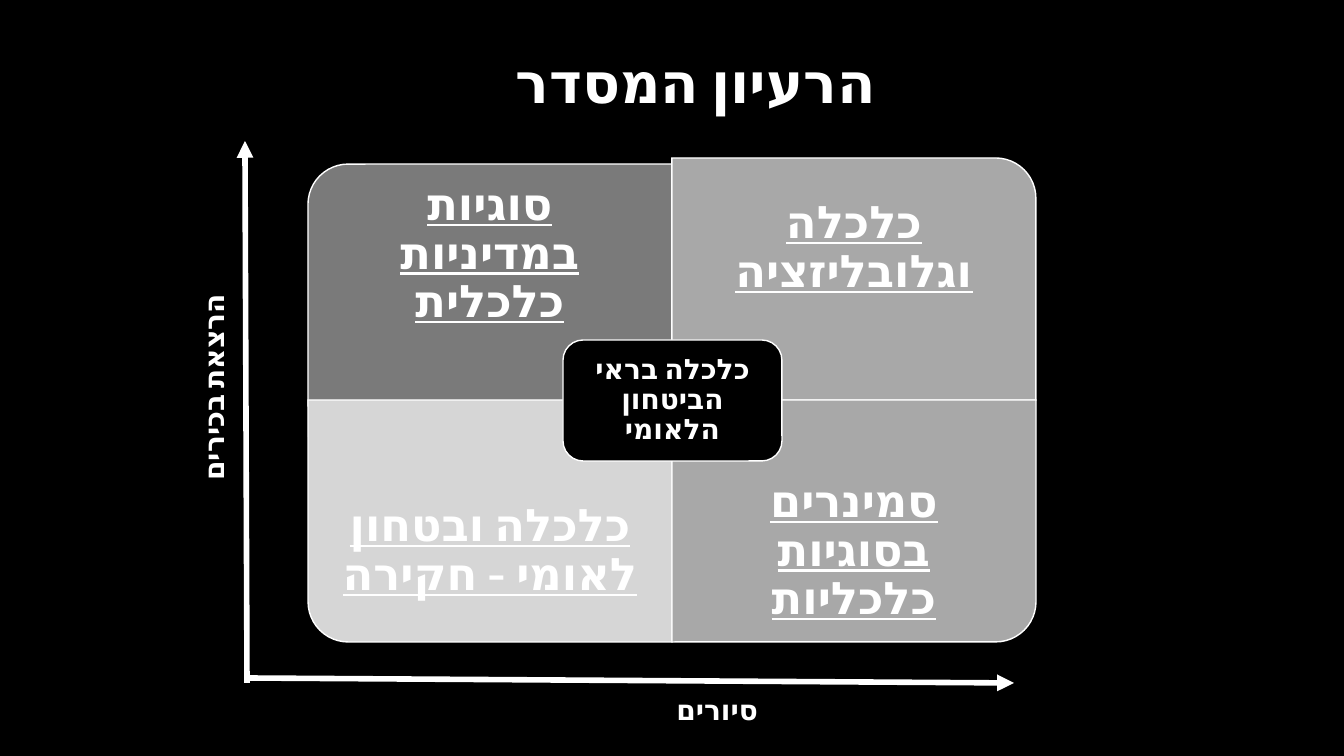
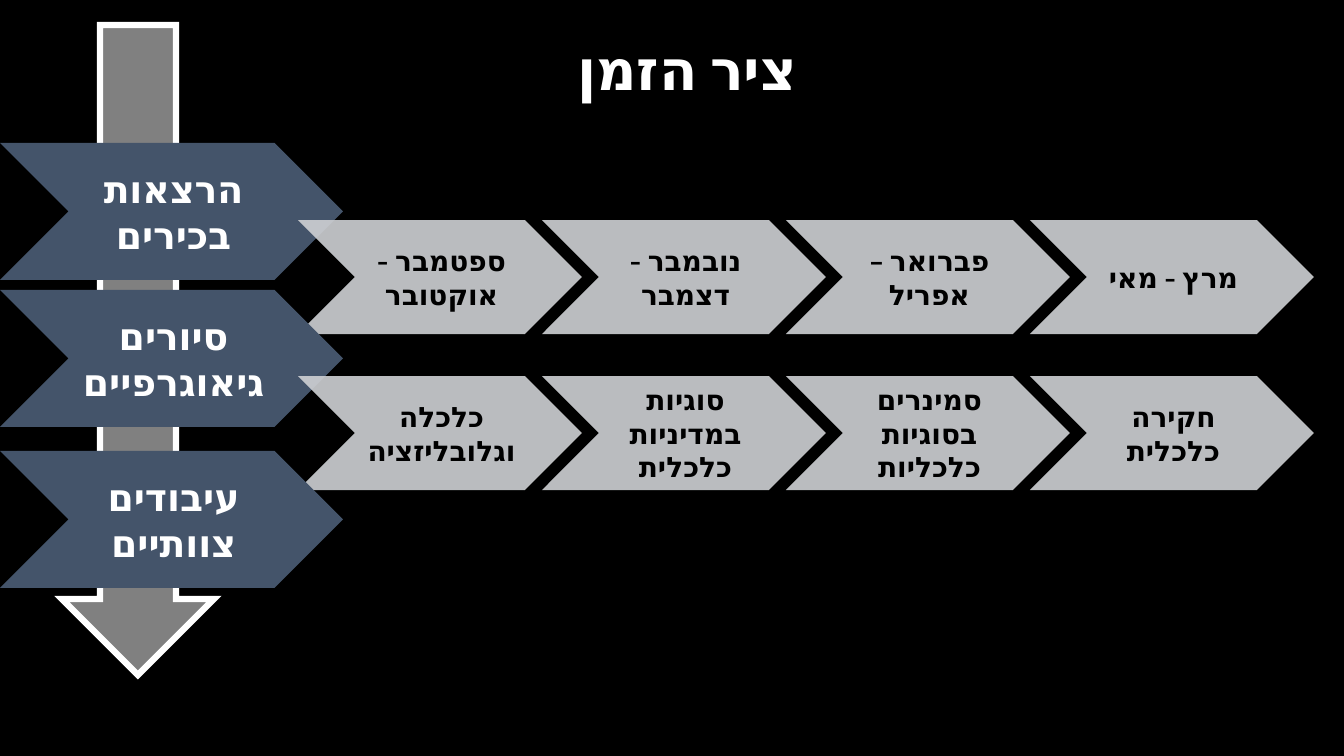
from pptx import Presentation
from pptx.dml.color import RGBColor
from pptx.enum.lang import MSO_LANGUAGE_ID
from pptx.enum.shapes import MSO_CONNECTOR, MSO_SHAPE
from pptx.enum.text import MSO_ANCHOR, MSO_AUTO_SIZE, PP_ALIGN
from pptx.oxml.xmlchemy import OxmlElement
from pptx.util import Emu, Pt

EMU_PER_PX = 914400 / 100.8
FONT = "Cabin"
COLORS = {
    "black": "000000", "white": "FFFFFF", "dark gray": "7A7A7A",
    "mid gray": "A8A8A8", "pale gray": "D6D6D6", "arrow gray": "808080",
    "slate": "44546A", "silver": "CFD1D4",
}
STRAIGHT = MSO_CONNECTOR.STRAIGHT
ROUND_CORNER = MSO_SHAPE.ROUND_1_RECTANGLE
ROUNDED = MSO_SHAPE.ROUNDED_RECTANGLE
CHEVRON = MSO_SHAPE.CHEVRON
DOWN_ARROW = MSO_SHAPE.DOWN_ARROW
HEBREW = MSO_LANGUAGE_ID.HEBREW
MIDDLE = MSO_ANCHOR.MIDDLE
GROW = MSO_AUTO_SIZE.SHAPE_TO_FIT_TEXT
CENTER, RIGHT = PP_ALIGN.CENTER, PP_ALIGN.RIGHT

QUADRANT_WIDTH, QUADRANT_HEIGHT, QUADRANT_TEXT_HEIGHT = 364, 242, 181
MATRIX_CENTER_X, MATRIX_CENTER_Y = 672, 400
QUADRANTS = [
    ("סוגיות במדיניות כלכלית", "dark gray", 270, 0, 164),
    ("כלכלה וגלובליזציה", "mid gray", 0, 1, 158),
    ("כלכלה ובטחון לאומי - חקירה", "pale gray", 180, 0, MATRIX_CENTER_Y),
    ("סמינרים בסוגיות כלכליות", "mid gray", 90, 1, MATRIX_CENTER_Y),
]
TIMELINE = [
    ("הרצאות בכירים", 143,
     ["ספטמבר - אוקטובר", "נובמבר - דצמבר", "פברואר – אפריל", "מרץ - מאי"]),
    ("סיורים גיאוגרפיים", 290,
     ["כלכלה וגלובליזציה", "סוגיות במדיניות כלכלית",
      "סמינרים בסוגיות כלכליות", "חקירה כלכלית"]),
    ("עיבודים צוותיים", 451, []),
]
STEP_LEFT, STEP_PITCH = 298, 244
STEP_TOP, STEP_ROW_PITCH = 220, 156


def px(length):
    """Turn pixels into EMU."""
    return Emu(round(length * EMU_PER_PX))


def rgb(name):
    """Look up a named colour."""
    return RGBColor.from_string(COLORS[name])


def add_child(parent, tag, **attributes):
    """Append an XML element with attributes."""
    child = OxmlElement(tag)
    for key, value in attributes.items():
        child.set(key, value)
    parent.append(child)


def write_text(shape, text, *, size, color="white", align=CENTER, spacing=0.9,
               underline=None, insets=(10, 5, 10, 5), wrap=True):
    """Write one right-to-left paragraph into a shape."""
    frame = shape.text_frame
    frame.word_wrap = wrap
    frame.vertical_anchor = MIDDLE
    (frame.margin_left, frame.margin_top,
     frame.margin_right, frame.margin_bottom) = map(px, insets)
    paragraph = frame.paragraphs[0]
    paragraph.alignment = align
    paragraph.line_spacing = spacing
    paragraph._p.get_or_add_pPr().set("rtl", "1")
    run = paragraph.add_run()
    run.text = text
    font = run.font
    font.name, font.size, font.bold = FONT, Pt(size), True
    font.underline = underline
    font.language_id = HEBREW
    font.color.rgb = rgb(color)
    add_child(run._r.get_or_add_rPr(), "a:cs", typeface=FONT)


def add_label(slide, text, left, top, width, height, size, rotation=0):
    """Add a one-line label that grows with its text."""
    box = slide.shapes.add_textbox(px(left), px(top), px(width), px(height))
    box.rotation = rotation
    write_text(box, text, size=size, align=RIGHT, wrap=False)
    box.text_frame.auto_size = GROW


def add_title(slide, text, left, top, width):
    """Add a slide title."""
    add_label(slide, text, left, top, width, 72, size=40)


def add_block(slide, kind, left, top, width, height, fill, outline=0, opacity=100):
    """Add a filled preset shape with an optional white outline in points."""
    shape = slide.shapes.add_shape(kind, px(left), px(top), px(width), px(height))
    shape.shadow.inherit = False
    shape.fill.solid()
    shape.fill.fore_color.rgb = rgb(fill)
    if opacity < 100:
        color = shape._element.spPr.find(".//{*}srgbClr")
        add_child(color, "a:alpha", val=str(opacity * 1000))
    if outline:
        shape.line.color.rgb = rgb("white")
        shape.line.width = Pt(outline)
        add_child(shape.line._get_or_add_ln(), "a:miter", lim="800000")
    else:
        shape.line.fill.background()
    return shape


def add_axis(slide, start, end):
    """Add a white axis with an arrowhead at its end."""
    axis = slide.shapes.add_connector(STRAIGHT, *map(px, start + end))
    axis.line.color.rgb = rgb("white")
    axis.line.width = Pt(4)
    add_child(axis.line._get_or_add_ln(), "a:tailEnd", type="triangle")
    add_child(axis._element.spPr, "a:effectLst")


def add_quadrant(slide, text, fill, rotation, column, top):
    """Add a matrix quadrant with its rounded corner turned outwards."""
    left = MATRIX_CENTER_X + (column - 1) * QUADRANT_WIDTH
    width, height = QUADRANT_WIDTH, QUADRANT_HEIGHT
    shift = 0
    if rotation % 180:
        shift = (width - height) // 2
        width, height = height, width
    block = add_block(slide, ROUND_CORNER, left + shift, top - shift,
                      width, height, fill, outline=1)
    block.rotation = rotation
    text_top = top
    if top == MATRIX_CENTER_Y:
        text_top += QUADRANT_HEIGHT - QUADRANT_TEXT_HEIGHT
    box = slide.shapes.add_textbox(px(left), px(text_top), px(QUADRANT_WIDTH),
                                   px(QUADRANT_TEXT_HEIGHT))
    write_text(box, text, size=32, underline=True, insets=(25,) * 4)


def add_timeline_row(slide, row, heading, top, steps):
    """Add a heading chevron followed by its step chevrons."""
    chevron = add_block(slide, CHEVRON, 0, top, 343, 137, "slate")
    write_text(chevron, heading, size=27, spacing=1.0, insets=(4, 2, 0, 2))
    for column, step in enumerate(steps):
        chevron = add_block(slide, CHEVRON, STEP_LEFT + column * STEP_PITCH,
                            STEP_TOP + row * STEP_ROW_PITCH, 284, 114,
                            "silver", opacity=90)
        write_text(chevron, step, size=20, color="black", spacing=1.0,
                   insets=(3, 1, 0, 1))


def build_matrix_slide(slide):
    """Build the quadrant matrix with its two axes."""
    add_title(slide, "הרעיון המסדר", 460, 49, 426)
    for quadrant in QUADRANTS:
        add_quadrant(slide, *quadrant)
    hub = add_block(slide, ROUNDED, 563, 340, 219, 121, "black", outline=1)
    write_text(hub, "כלכלה בראי הביטחון הלאומי", size=20, insets=(8,) * 4)
    add_axis(slide, (247, 678), (1014, 683))
    add_axis(slide, (247, 683), (245, 141))
    add_label(slide, "סיורים", 656, 691, 112, 40, size=20)
    add_label(slide, "הרצאת בכירים", 100, 379, 230, 40, size=20, rotation=270)


def build_timeline_slide(slide):
    """Build the timeline rows over the downward arrow."""
    add_title(slide, "ציר הזמן", 545, 36, 262)
    add_block(slide, DOWN_ARROW, 62, 25, 152, 650, "arrow gray", outline=4.5)
    for row, content in enumerate(TIMELINE):
        add_timeline_row(slide, row, *content)


def main():
    """Build and save the presentation."""
    presentation = Presentation()
    presentation.slide_width, presentation.slide_height = px(1344), px(756)
    background = presentation.slide_master.background.fill
    background.solid()
    background.fore_color.rgb = rgb("black")
    blank = presentation.slide_layouts[6]
    for build in (build_matrix_slide, build_timeline_slide):
        build(presentation.slides.add_slide(blank))
    presentation.save("out.pptx")


if __name__ == "__main__":
    main()
